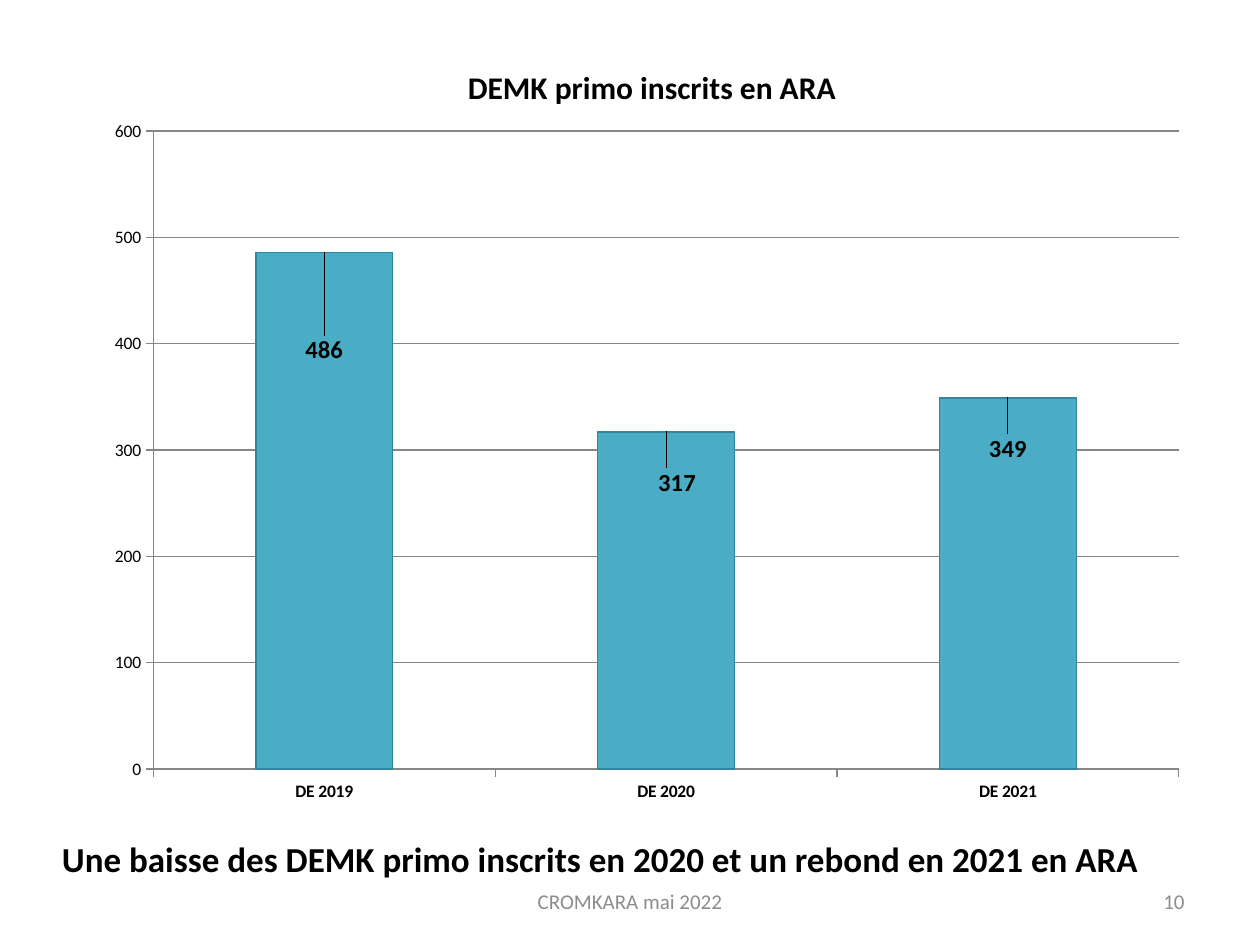
from dataclasses import dataclass

from lxml import etree
from pptx import Presentation
from pptx import util as u
from pptx.chart import data as chart_data
from pptx.dml import color
from pptx.enum import chart as charts, text
from pptx.oxml import ns


@dataclass(frozen=True)
class Theme:
    """Colours and type sizes of the slide."""
    font: str = "Calibri"
    ink: str = "000000"
    muted: str = "8C8C8C"
    bar: str = "4BACC6"
    bar_edge: str = "31859C"
    grid: str = "878787"
    headline: int = 20
    chart_title: int = 18
    label: int = 14
    footer: int = 12
    axis: int = 10


THEME = Theme()
TITLE = "DEMK primo inscrits en ARA"
ENROLMENTS = {"DE 2019": 486, "DE 2020": 317, "DE 2021": 349}
LABEL_OFFSETS = [(0, 0.15), (0.01, 0.09), (0, 0.09)]
PLOT_LAYOUT = {"layoutTarget": "inner", "xMode": "edge", "yMode": "edge",
               "x": 0.05, "y": 0.13, "w": 0.93, "h": 0.81}
TITLE_LAYOUT = {"xMode": "edge", "yMode": "edge", "x": 0.33, "y": 0.04}


def rgb(value):
    """Return a colour from its hexadecimal form."""
    return color.RGBColor.from_string(value)


def style_font(font, size, ink=THEME.ink, bold=False):
    """Apply the theme typeface with a size, colour and weight."""
    font.name = THEME.font
    font.size = u.Pt(size)
    font.bold = bold
    font.color.rgb = rgb(ink)


def style_line(line, ink):
    """Draw a thin line in one colour."""
    line.color.rgb = rgb(ink)
    line.width = u.Pt(0.75)


def add_text(slide, content, box, size, ink, align, anchor, bold=False):
    """Add one line of text in a box given in centimetres."""
    shape = slide.shapes.add_textbox(*map(u.Cm, box))
    frame = shape.text_frame
    frame.word_wrap = True
    frame.vertical_anchor = anchor
    paragraph = frame.paragraphs[0]
    paragraph.text = content
    paragraph.alignment = align
    style_font(paragraph.font, size, ink, bold)


def build_layout(values):
    """Build a manual chart layout element."""
    layout = etree.Element(ns.qn("c:layout"))
    manual = etree.SubElement(layout, ns.qn("c:manualLayout"))
    for name, value in values.items():
        etree.SubElement(manual, ns.qn(f"c:{name}")).set("val", str(value))
    return layout


def place(element, predecessor, values):
    """Give a chart element a manual layout, after its predecessor if any."""
    for old in element.findall(ns.qn("c:layout")):
        element.remove(old)
    before = element.find(ns.qn(predecessor)) if predecessor else None
    if before is None:
        element.insert(0, build_layout(values))
    else:
        before.addnext(build_layout(values))


def style_axes(chart):
    """Style the category axis, the value axis and the gridlines."""
    for axis, bold in ((chart.category_axis, True), (chart.value_axis, False)):
        style_font(axis.tick_labels.font, THEME.axis, bold=bold)
        style_line(axis.format.line, THEME.grid)
        axis.major_tick_mark = charts.XL_TICK_MARK.OUTSIDE
    values = chart.value_axis
    values.minimum_scale, values.maximum_scale, values.major_unit = 0, 600, 100
    values.tick_labels.number_format = "0"
    values.tick_labels.number_format_is_linked = False
    style_line(values.major_gridlines.format.line, THEME.grid)


def style_bars(plot):
    """Colour the bars and move their labels inside them."""
    plot.gap_width = 150
    plot.vary_by_categories = False
    series = plot.series[0]
    series.format.fill.solid()
    series.format.fill.fore_color.rgb = rgb(THEME.bar)
    style_line(series.format.line, THEME.bar_edge)
    series.data_labels.show_value = True
    style_font(series.data_labels.font, THEME.label, bold=True)
    for index in range(len(LABEL_OFFSETS)):
        label = series.points[index].data_label
        style_font(label.font, THEME.label, bold=True)
        label.position = charts.XL_LABEL_POSITION.OUTSIDE_END
    for element, (x, y) in zip(plot._element.iter(ns.qn("c:dLbl")), LABEL_OFFSETS):
        place(element, "c:idx", {"x": x, "y": y})


def add_enrolment_chart(slide, box):
    """Add the column chart of first enrolments."""
    data = chart_data.CategoryChartData(number_format="0")
    data.categories = list(ENROLMENTS)
    data.add_series(TITLE, list(ENROLMENTS.values()))
    kind = charts.XL_CHART_TYPE.COLUMN_CLUSTERED
    chart = slide.shapes.add_chart(kind, *map(u.Cm, box), data).chart
    style_font(chart.font, THEME.axis)
    chart.has_legend = False
    chart.has_title = True
    paragraph = chart.chart_title.text_frame.paragraphs[0]
    paragraph.text = TITLE
    style_font(paragraph.font, THEME.chart_title, bold=True)
    style_axes(chart)
    style_bars(chart.plots[0])
    root = chart._chartSpace
    place(next(root.iter(ns.qn("c:plotArea"))), None, PLOT_LAYOUT)
    place(next(root.iter(ns.qn("c:title"))), "c:tx", TITLE_LAYOUT)


def main():
    """Build and save the slide."""
    presentation = Presentation()
    presentation.slide_width = u.Cm(25.4)
    presentation.slide_height = u.Cm(19.05)
    slide = presentation.slides.add_slide(presentation.slide_layouts[6])
    align, anchor = text.PP_ALIGN, text.MSO_ANCHOR
    add_text(slide, "Une baisse des DEMK primo inscrits en 2020 et un rebond en 2021 en ARA",
             (1, 16.28, 23.42, 1.57), THEME.headline, THEME.ink,
             align.LEFT, anchor.BOTTOM, bold=True)
    add_enrolment_chart(slide, (1.98, 0.58, 22.23, 15.88))
    add_text(slide, "10", (18.2, 17.66, 5.93, 1.01), THEME.footer, THEME.muted,
             align.RIGHT, anchor.MIDDLE)
    add_text(slide, "CROMKARA mai 2022", (8.68, 17.66, 8.04, 1.01), THEME.footer,
             THEME.muted, align.CENTER, anchor.MIDDLE)
    presentation.save("out.pptx")


if __name__ == "__main__":
    main()
